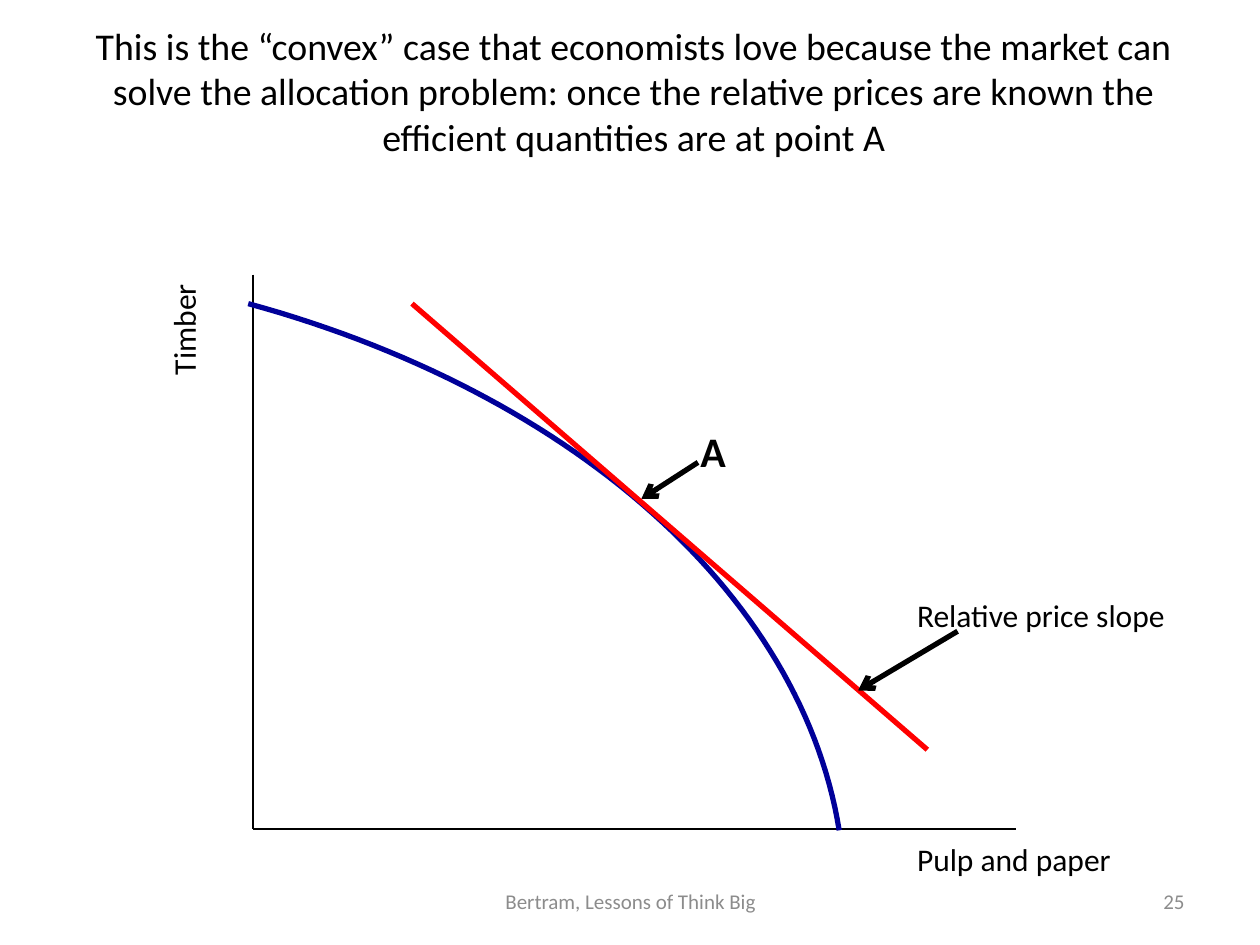
"""Build the slide on the convex production frontier and relative prices."""
from lxml.etree import SubElement
from pptx import Presentation
from pptx.dml.color import RGBColor
from pptx.enum.shapes import MSO_CONNECTOR
from pptx.enum.text import MSO_ANCHOR as Anchor, MSO_AUTO_SIZE as AutoSize, PP_ALIGN as Align
from pptx.oxml.ns import qn
from pptx.util import Inches, Pt

BLACK = RGBColor(0x00, 0x00, 0x00)
GREY = RGBColor(0x8C, 0x8C, 0x8C)
NAVY = RGBColor(0x00, 0x00, 0x99)
RED = RGBColor(0xFF, 0x00, 0x00)

TITLE = ("This is the “convex” case that economists love because the market can "
         "solve the allocation problem: once the relative prices are known the "
         "efficient quantities are at point A")
TITLE_BOX = (0.53, 0.13, 9, 1.18)
TITLE_FONT = {"size": Pt(21.6)}

FOOTER_FONT = {"size": Pt(12), "color": GREY}
FOOTERS = [
    ("Bertram, Lessons of Think Big", (3.42, 6.95, 3.17, 0.4), Align.CENTER),
    ("25", (7.17, 6.95, 2.33, 0.4), Align.RIGHT),
]

LABEL_FONT = {"size": Pt(18)}
POINT_FONT = {"size": Pt(24), "bold": True}
LABELS = [
    ("Timber", (0.99, 2.41, 0.93, 0.4), 270, LABEL_FONT),
    ("Pulp and paper", (7.18, 6.62, 1.76, 0.4), 0, LABEL_FONT),
    ("A", (5.46, 3.33, 0.48, 0.5), 0, POINT_FONT),
    ("Relative price slope", (7.18, 4.68, 2.19, 0.4), 0, LABEL_FONT),
]

ORIGIN = (2.01, 6.58)
AXES = [((2.01, 2.18), ORIGIN), ((8.06, 6.58), ORIGIN)]
FRONTIER = [(1.97, 2.41), (4.56, 3.12), (6.36, 4.73), (6.66, 6.59)]
FRONTIER_STEPS = 60
PRICE_LINE = ((3.27, 2.41), (7.36, 5.95))
POINT_ARROW = ((5.54, 3.67), (5.09, 3.96))
PRICE_ARROW = ((7.6, 5.01), (6.81, 5.48))


def place(shape, bounds):
    for side, value in zip(("left", "top", "width", "height"), bounds):
        setattr(shape, side, Inches(value))


def write(shape, text, font, align=Align.LEFT, anchor=Anchor.TOP, wrap=True):
    frame = shape.text_frame
    frame.word_wrap = wrap
    frame.vertical_anchor = anchor
    para = frame.paragraphs[0]
    para.alignment = align
    span = para.add_run()
    span.text = text
    style = {"name": "Calibri", "bold": False, "color": BLACK, **font}
    span.font.color.rgb = style.pop("color")
    for name, value in style.items():
        setattr(span.font, name, value)


def add_text(page, text, bounds, font, **layout):
    box = page.shapes.add_textbox(*map(Inches, bounds))
    write(box, text, font, **layout)
    return box


def add_line(page, ends, color, width, arrow=False):
    start, end = ends
    line = page.shapes.add_connector(MSO_CONNECTOR.STRAIGHT, *map(Inches, start + end))
    line.line.color.rgb = color
    line.line.width = Pt(width)
    if arrow:
        SubElement(line.line._get_or_add_ln(), qn("a:tailEnd"), type="arrow")
    SubElement(line._element.spPr, qn("a:effectLst"))


def bezier_point(controls, share):
    rest = 1 - share
    weights = (rest ** 3, 3 * rest ** 2 * share, 3 * rest * share ** 2, share ** 3)
    return tuple(Inches(sum(weight * value for weight, value in zip(weights, axis)))
                 for axis in zip(*controls))


def add_frontier(page):
    points = [bezier_point(FRONTIER, step / FRONTIER_STEPS)
              for step in range(FRONTIER_STEPS + 1)]
    builder = page.shapes.build_freeform(*points[0])
    builder.add_line_segments(points[1:], close=False)
    curve = builder.convert_to_shape()
    curve.shadow.inherit = False
    curve.fill.background()
    curve.line.color.rgb = NAVY
    curve.line.width = Pt(3)


def main():
    deck = Presentation()
    deck.slide_width, deck.slide_height = Inches(10), Inches(7.5)
    page = deck.slides.add_slide(deck.slide_layouts.get_by_name("Title Only"))

    title = page.shapes.title
    place(title, TITLE_BOX)
    write(title, TITLE, TITLE_FONT, align=Align.CENTER, anchor=Anchor.MIDDLE)
    title.text_frame.auto_size = AutoSize.NONE

    for text, bounds, align in FOOTERS:
        add_text(page, text, bounds, FOOTER_FONT, align=align, anchor=Anchor.MIDDLE)
    for axis in AXES:
        add_line(page, axis, BLACK, 1)
    add_frontier(page)
    for text, bounds, turn, font in LABELS:
        label = add_text(page, text, bounds, font, wrap=font is POINT_FONT)
        label.text_frame.auto_size = AutoSize.SHAPE_TO_FIT_TEXT
        label.rotation = turn
    add_line(page, POINT_ARROW, BLACK, 3, arrow=True)
    add_line(page, PRICE_LINE, RED, 3)
    add_line(page, PRICE_ARROW, BLACK, 3, arrow=True)

    deck.save("out.pptx")


if __name__ == "__main__":
    main()
